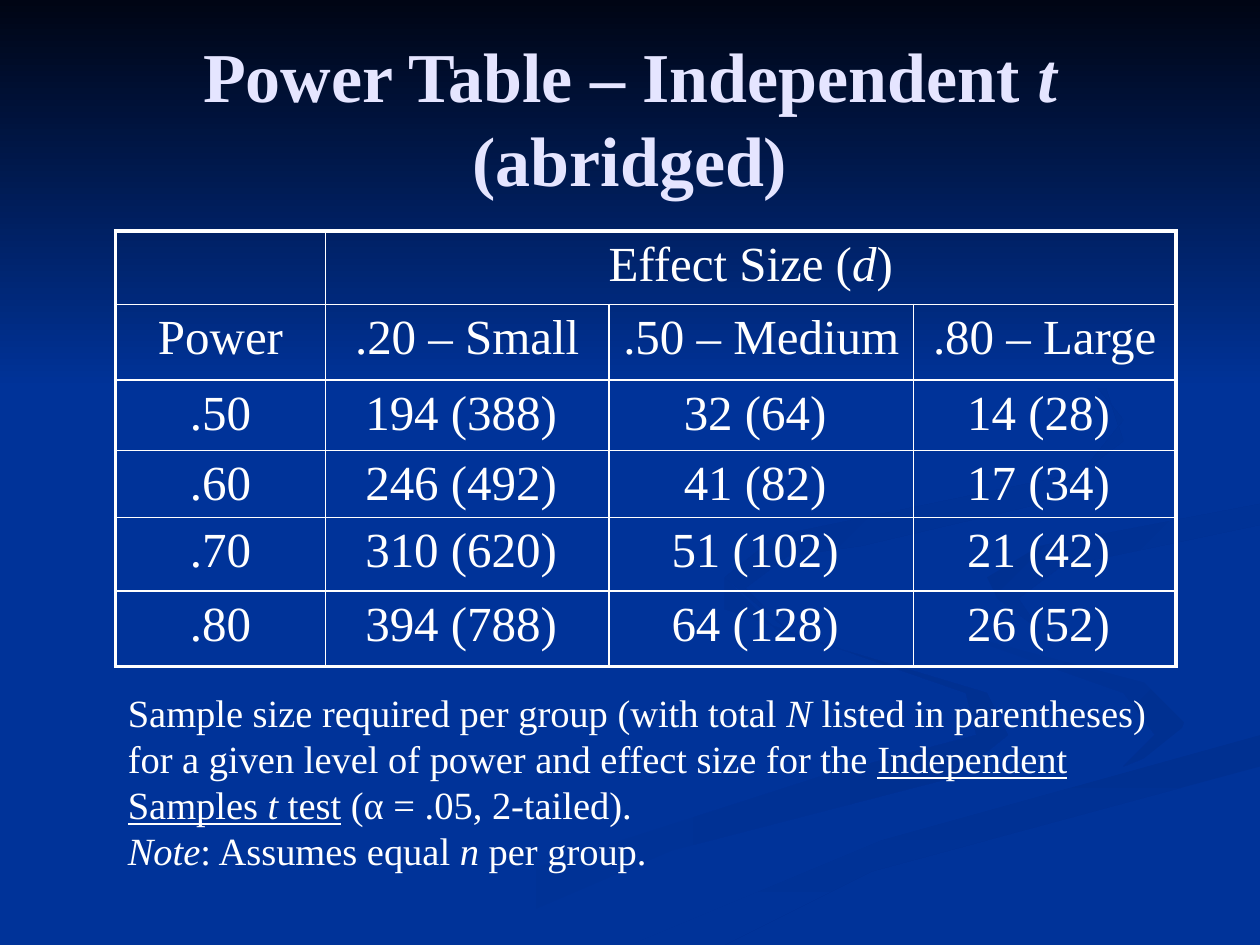
from dataclasses import dataclass
from typing import NamedTuple

from lxml import etree
from pptx import Presentation
from pptx import util as u
from pptx.dml.color import RGBColor
from pptx.enum import shapes, text
from pptx.oxml.ns import qn

GRID = u.Inches(1) // 12  # the slide is 120 columns by 90 rows
WIDTH, HEIGHT = 120, 90


@dataclass(frozen=True)
class Theme:
    font: str = "Times New Roman"
    background: str = "003399"
    shade: str = "003091"
    night: str = "000514"
    ink: str = "FFFFFF"
    heading: str = "E5E5FF"
    title_size: int = 40
    table_size: int = 28
    note_size: int = 22
    outer_line: float = 2.25
    inner_line: float = 1


class Span(NamedTuple):
    text: str
    italic: bool = False
    underline: bool = False


class Area(NamedTuple):
    """A place on the grid, in columns and rows."""
    left: float
    top: float
    width: float
    height: float

    def emu(self) -> list[int]:
        return [round(GRID * side) for side in self]


class Swirl(NamedTuple):
    """A closed outline in grid columns and rows, with its gradient."""
    start: str
    end: str
    angle: int  # clockwise
    points: list[tuple[int, int]]


THEME = Theme()
BLUE, SHADE = THEME.background, THEME.shade

SWIRLS = [
    Swirl(BLUE, SHADE, 0, [
        (94, 66), (74, 60), (69, 55), (69, 58), (92, 66), (93, 70), (78, 74), (50, 83),
        (36, 90), (43, 90), (64, 81), (91, 74), (96, 70)]),
    Swirl(BLUE, SHADE, 45, [
        (113, 68), (109, 65), (91, 60), (87, 56), (90, 60), (107, 66), (110, 70), (107, 73),
        (112, 71)]),
    Swirl(SHADE, BLUE, 90, [
        (60, 90), (69, 90), (83, 83), (120, 73), (120, 70), (84, 80)]),
    Swirl(BLUE, BLUE, 0, [
        (87, 56), (90, 60), (109, 65), (113, 69), (108, 73), (80, 80), (57, 90), (60, 90),
        (84, 80), (120, 70), (120, 65), (102, 60), (94, 56), (99, 52), (120, 48), (120, 46),
        (93, 51)]),
    Swirl(SHADE, BLUE, 45, [
        (94, 55), (95, 57), (99, 60), (97, 57), (101, 54), (120, 50), (120, 48), (99, 52)]),
    Swirl(SHADE, BLUE, 45, [
        (82, 52), (99, 48), (107, 42), (105, 36), (91, 28), (103, 35), (107, 40), (103, 45),
        (74, 51), (69, 55), (75, 60), (71, 56), (75, 53)]),
]

NIGHT_AREA = Area(0, 0, WIDTH, 37)
TITLE_AREA = Area(6, 3.6, 108, 15)
TABLE_AREA = Area(11, 22, 101, 41.5)
NOTE_AREA = Area(11, 65, 100, 18.8)
COLUMNS = [20, 27, 29, 25]
ROWS = [7, 7.2, 6.7, 6.4, 7, 7.2]

TITLE = [[Span("Power Table – Independent "), Span("t ", italic=True), Span("(abridged)")]]
EFFECT_SIZE = [Span("Effect Size ("), Span("d", italic=True), Span(")")]
POWER_ROWS = [
    ["Power", ".20 – Small", ".50 – Medium", ".80 – Large"],
    [".50", "194 (388) ", "32 (64) ", "14 (28) "],
    [".60", "246 (492) ", "41 (82) ", "17 (34) "],
    [".70", "310 (620) ", "51 (102) ", "21 (42) "],
    [".80", "394 (788) ", "64 (128) ", "26 (52) "],
]
NOTE = [
    [Span("Sample size required per group (with total "), Span("N", italic=True),
     Span(" listed in parentheses) for a given level of power and effect size for the "),
     Span("Independent Samples ", underline=True), Span("t", italic=True, underline=True),
     Span(" test", underline=True), Span(" (α = .05, 2-tailed).")],
    [Span("Note", italic=True), Span(": Assumes equal "), Span("n", italic=True),
     Span(" per group.")],
]


def rgb(color: str) -> RGBColor:
    return RGBColor.from_string(color)


def write(frame, paragraphs: list[list[Span]], *, size: float, color: str = THEME.ink,
          bold: bool = False, align=text.PP_ALIGN.LEFT) -> None:
    for index, spans in enumerate(paragraphs):
        para = frame.add_paragraph() if index else frame.paragraphs[0]
        para.alignment = align
        for span in spans:
            run = para.add_run()
            run.text = span.text
            font = run.font
            font.name, font.size, font.bold = THEME.font, u.Pt(size), bold
            font.italic, font.underline = span.italic, span.underline
            font.color.rgb = rgb(color)


def add_text(page, area: Area, paragraphs: list[list[Span]],
             anchor=text.MSO_ANCHOR.TOP, **style) -> None:
    frame = page.shapes.add_textbox(*area.emu()).text_frame
    frame.word_wrap = True
    frame.vertical_anchor = anchor
    write(frame, paragraphs, **style)


def paint(shape, start: str, end: str, angle: int) -> None:
    """Fill with a gradient, or flat when both colours agree, and drop the outline."""
    shape.shadow.inherit = False
    shape.line.fill.background()
    if start == end:
        shape.fill.solid()
        shape.fill.fore_color.rgb = rgb(start)
        return
    shape.fill.gradient()
    shape.fill.gradient_angle = -angle % 360
    for stop, color in zip(shape.fill.gradient_stops, (start, end)):
        stop.color.rgb = rgb(color)


def add_swirl(page, swirl: Swirl) -> None:
    first, *rest = swirl.points
    builder = page.shapes.build_freeform(*first, scale=GRID)
    builder.add_line_segments(rest, close=True)
    paint(builder.convert_to_shape(), swirl.start, swirl.end, swirl.angle)


def add_borders(cell, row: int, column: int) -> None:
    """Draw a thick line on the table's outer edge and a thin one inside."""
    outer = {
        "L": column == 0,
        "R": column + cell.span_width == len(COLUMNS),
        "T": row == 0,
        "B": row + 1 == len(ROWS),
    }
    properties = cell._tc.get_or_add_tcPr()
    for side, is_outer in outer.items():
        points = THEME.outer_line if is_outer else THEME.inner_line
        line = etree.SubElement(properties, qn(f"a:ln{side}"), w=str(u.Pt(points)))
        fill = etree.SubElement(line, qn("a:solidFill"))
        etree.SubElement(fill, qn("a:srgbClr"), val=THEME.ink)


def add_power_table(page) -> None:
    table = page.shapes.add_table(len(ROWS), len(COLUMNS), *TABLE_AREA.emu()).table
    table.first_row = table.horz_banding = False
    for column, width in zip(table.columns, COLUMNS):
        column.width = GRID * width
    for row, height in zip(table.rows, ROWS):
        row.height = round(GRID * height)
    table.cell(0, 1).merge(table.cell(0, len(COLUMNS) - 1))

    body = [[[Span(value)] for value in values] for values in POWER_ROWS]
    for r, values in enumerate([[[], EFFECT_SIZE, [], []], *body]):
        for c, spans in enumerate(values):
            cell = table.cell(r, c)
            if not cell.is_spanned:
                add_borders(cell, r, c)
            cell.fill.background()
            write(cell.text_frame, [spans], size=THEME.table_size,
                  align=text.PP_ALIGN.CENTER)


def main() -> None:
    deck = Presentation()
    deck.slide_width, deck.slide_height = GRID * WIDTH, GRID * HEIGHT
    page = deck.slides.add_slide(deck.slide_layouts[6])
    page.background.fill.solid()
    page.background.fill.fore_color.rgb = rgb(THEME.background)
    for swirl in SWIRLS:
        add_swirl(page, swirl)
    night = page.shapes.add_shape(shapes.MSO_SHAPE.RECTANGLE, *NIGHT_AREA.emu())
    paint(night, THEME.night, BLUE, 90)
    add_power_table(page)
    add_text(page, NOTE_AREA, NOTE, size=THEME.note_size)
    add_text(page, TITLE_AREA, TITLE, anchor=text.MSO_ANCHOR.MIDDLE, size=THEME.title_size,
             color=THEME.heading, bold=True, align=text.PP_ALIGN.CENTER)
    deck.save("out.pptx")


if __name__ == "__main__":
    main()
